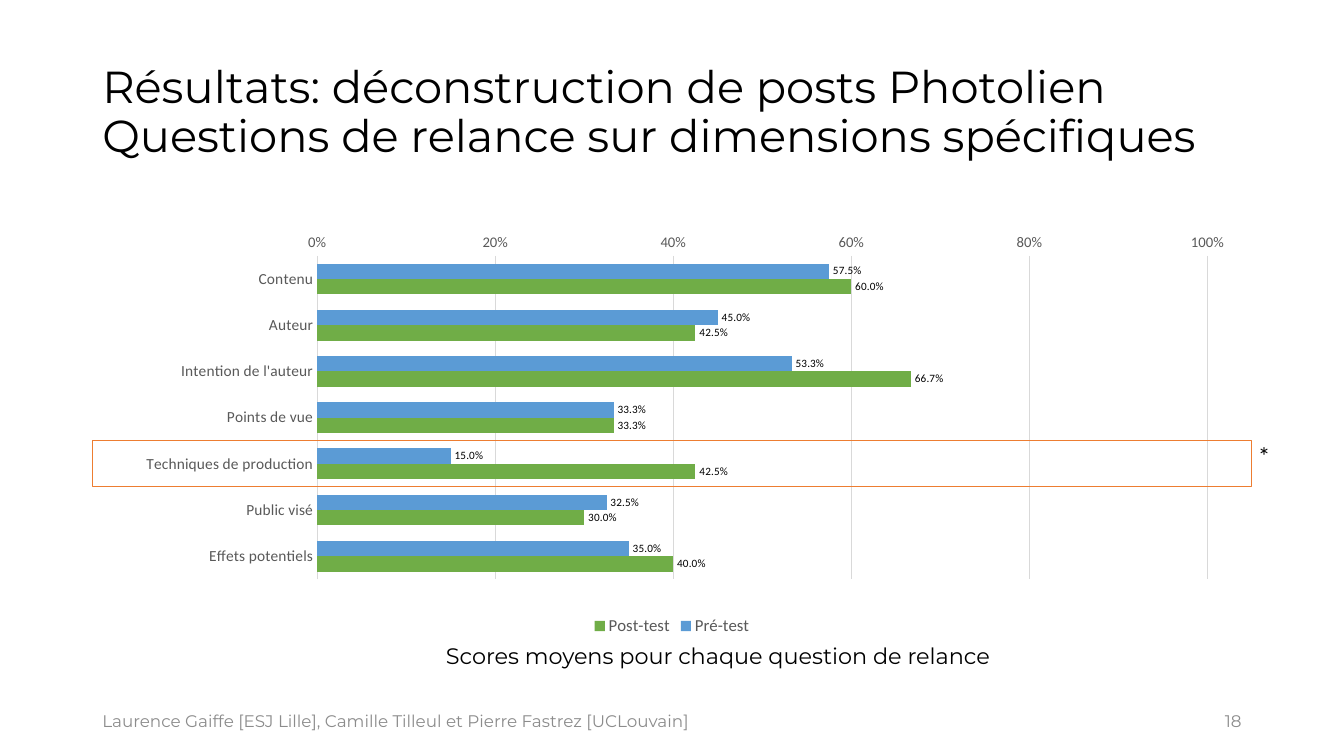
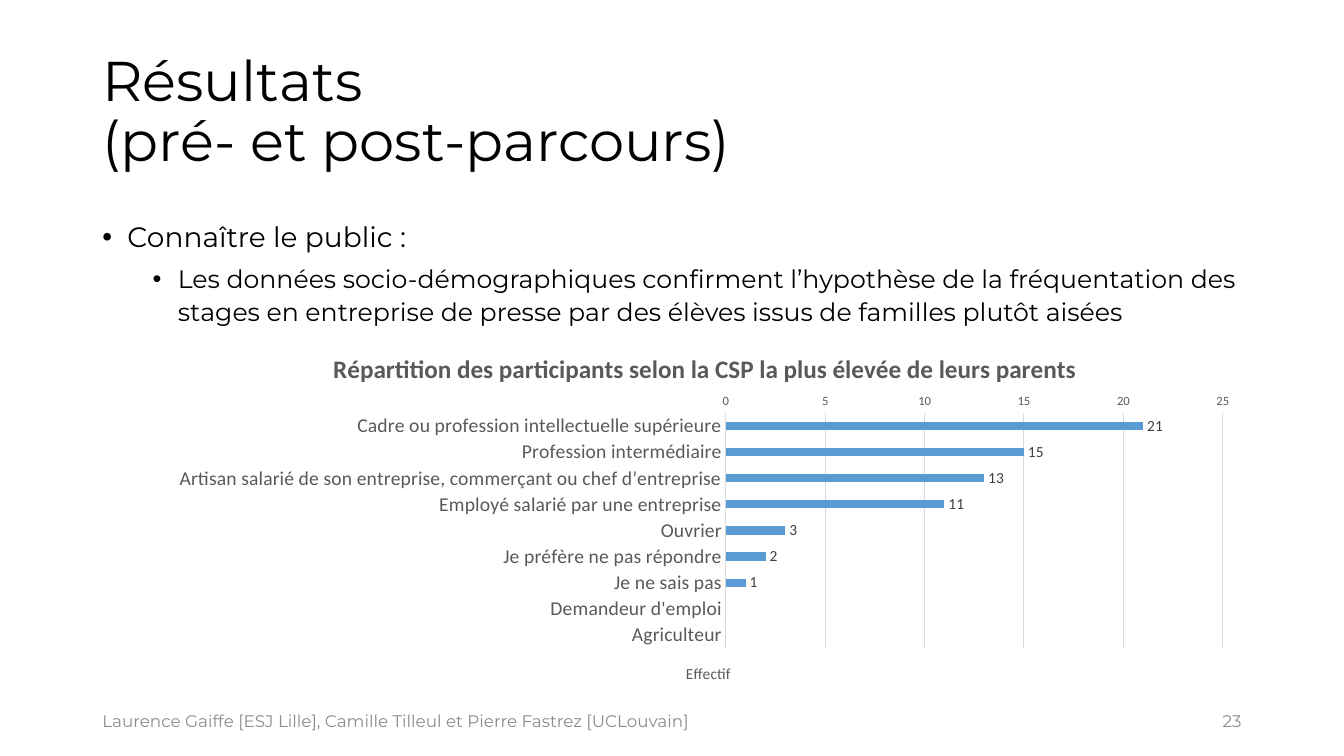
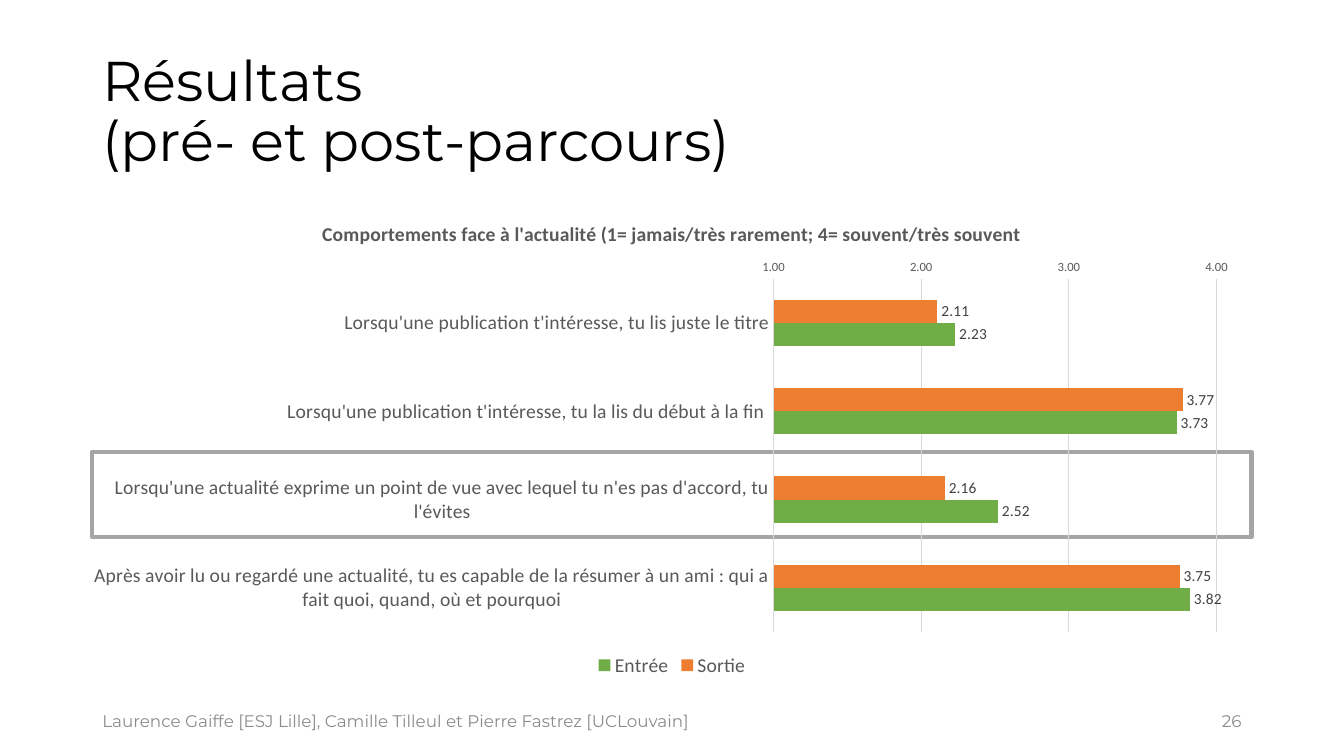
from lxml import etree
from pptx import Presentation
from pptx.chart.data import CategoryChartData
from pptx.dml.color import RGBColor
from pptx.enum import chart as ch, shapes, text
from pptx.oxml import ns
from pptx.util import Pt


class Theme:
    heading, chart_font = "Montserrat", "Calibri"
    black, footer, axis, label, grid = "000000", "8C8C8C", "595959", "404040", "D9D9D9"
    blue, green, orange, gray = "5B9BD5", "70AD47", "ED7D31", "A5A5A5"
    footer_size, caption_size, star_size = 12, 16, 18
    left, width = 66, 828


def add_text(slide, box, lines, size, color=Theme.black, font=Theme.heading,
             anchor=text.MSO_ANCHOR.MIDDLE, align=text.PP_ALIGN.LEFT, spacing=1.0):
    """Put one paragraph, with line breaks between its lines, in a text box."""
    frame = slide.shapes.add_textbox(*map(Pt, box)).text_frame
    frame.word_wrap, frame.vertical_anchor = True, anchor
    paragraph = frame.paragraphs[0]
    paragraph.alignment, paragraph.line_spacing = align, spacing
    for i, line in enumerate(lines):
        if i:
            paragraph.add_line_break()
        run = paragraph.add_run()
        run.text = line
        run.font.name, run.font.size = font, Pt(size)
        run.font.color.rgb = RGBColor.from_string(color)
    return frame


def place_in_chart(parent, fractions, inner=False):
    """Give a chart part a fixed place, as fractions of the chart."""
    layout = parent.find(ns.qn("c:layout"))
    if layout is None:
        layout = etree.Element(ns.qn("c:layout"))
        parent.insert(0, layout)
    manual = etree.SubElement(layout, ns.qn("c:manualLayout"))
    settings = [("layoutTarget", "inner")] if inner else []
    settings += [("xMode", "edge"), ("yMode", "edge"), *zip("xywh", fractions)]
    for tag, value in settings:
        etree.SubElement(manual, ns.qn(f"c:{tag}")).set("val", str(value))


RESULTS = ["Résultats", "(pré- et post-parcours)"]
AUTHORS = "Laurence Gaiffe [ESJ Lille], Camille Tilleul et Pierre Fastrez [UCLouvain]"

# Content; boxes are left, top, width, height, and plots are measured inside their chart
pages = [
    dict(
        number=18, title_size=32,
        title=["Résultats: déconstruction de posts Photolien",
               "Questions de relance sur dimensions spécifiques"],
        box=(Theme.left, 144, Theme.width, 313.2), plot=(160.6, 38.8, 635.9, 231.1),
        categories=["Contenu", "Auteur", "Intention de l'auteur", "Points de vue",
                    "Techniques de production", "Public visé", "Effets potentiels"],
        series=[("Pré-test", Theme.blue, [0.575, 0.45, 0.533, 0.333, 0.15, 0.325, 0.35]),
                ("Post-test", Theme.green, [0.6, 0.425, 0.667, 0.333, 0.425, 0.3, 0.4])],
        scale=dict(minimum_scale=0, maximum_scale=1, major_unit=0.2),
        gap=100, axis_format="0%", label_format="0.0%", label_color=Theme.black,
        sizes=dict(category=11, value=10.5, label=8, legend=12),
        highlight=dict(top=314.6, height=33.1, color=Theme.orange, weight=1, behind=False)),
    dict(
        number=23, title_size=40, title=RESULTS,
        box=(113, 238.3, 781.2, 262.1), plot=(405.5, 56.7, 355, 167.9),
        chart_title="Répartition des participants selon la CSP la plus élevée de leurs parents",
        axis_title="Effectif",
        categories=["Cadre ou profession intellectuelle supérieure", "Profession intermédiaire",
                    "Artisan salarié de son entreprise, commerçant ou chef d’entreprise",
                    "Employé salarié par une entreprise", "Ouvrier",
                    "Je préfère ne pas répondre", "Je ne sais pas",
                    "Demandeur d'emploi", "Agriculteur"],
        series=[("Effectif", Theme.blue, [21, 15, 13, 11, 3, 2, 1, None, None])],
        scale=dict(minimum_scale=0, maximum_scale=25, major_unit=5),
        gap=219, axis_format="General", label_format="General", label_color=Theme.label,
        sizes=dict(category=14, value=9, label=11, title=18, axis_title=11)),
    dict(
        number=26, title_size=40, title=RESULTS,
        box=(Theme.left, 144, Theme.width, 342.7), plot=(486.6, 55.3, 316.4, 252.2),
        chart_title="Comportements face à l'actualité "
                    "(1= jamais/très rarement; 4= souvent/très souvent",
        categories=["Lorsqu'une publication t'intéresse, tu lis juste le titre",
                    "Lorsqu'une publication t'intéresse, tu la lis du début à la fin ",
                    "Lorsqu'une actualité exprime un point de vue avec lequel "
                    "tu n'es pas d'accord, tu l'évites",
                    "Après avoir lu ou regardé une actualité, tu es capable de la résumer "
                    "à un ami : qui a fait quoi, quand, où et pourquoi"],
        series=[("Sortie", Theme.orange, [2.11, 3.77, 2.16, 3.75]),
                ("Entrée", Theme.green, [2.23, 3.73, 2.52, 3.82])],
        scale=dict(minimum_scale=1, maximum_scale=4, major_unit=1),
        gap=182, axis_format="###0.00", label_format="###0.00", label_color=Theme.label,
        sizes=dict(category=14, value=9, label=11, legend=14, title=14),
        highlight=dict(top=322.6, height=61.2, color=Theme.gray, weight=3, behind=True)),
]

deck = Presentation()
deck.slide_width, deck.slide_height = Pt(960), Pt(540)
slides = []

for page in pages:
    slide = deck.slides.add_slide(deck.slide_layouts[6])
    slides.append(slide)
    sizes = page["sizes"]

    # Title and footer
    add_text(slide, (Theme.left, 28.8, Theme.width, 104.4), page["title"],
             page["title_size"], spacing=0.9)
    add_text(slide, (Theme.left, 500.5, 600, 28.8), [AUTHORS],
             Theme.footer_size, Theme.footer)
    add_text(slide, (678, 500.5, 216, 28.8), [str(page["number"])],
             Theme.footer_size, Theme.footer, align=text.PP_ALIGN.RIGHT)

    # Chart
    data = CategoryChartData()
    data.categories = page["categories"]
    for name, _, values in page["series"]:
        data.add_series(name, values)
    chart_frame = slide.shapes.add_chart(ch.XL_CHART_TYPE.BAR_CLUSTERED,
                                         *map(Pt, page["box"]), data)
    chart = chart_frame.chart
    chart.font.name, chart.font.size = Theme.chart_font, Pt(10)
    chart.has_title = "title" in sizes
    chart.has_legend = "legend" in sizes
    _, _, chart_width, chart_height = page["box"]
    place_in_chart(chart.plots[0]._element.getparent(),
                   [length / whole for length, whole in
                    zip(page["plot"], (chart_width, chart_height) * 2)], inner=True)

    # Bars and value labels
    plot = chart.plots[0]
    plot.gap_width, plot.overlap, plot.vary_by_categories = page["gap"], 0, False
    for series, (_, color, _) in zip(plot.series, page["series"]):
        series.format.fill.solid()
        series.format.fill.fore_color.rgb = RGBColor.from_string(color)
        labels = series.data_labels
        for key, value in dict(show_value=True, number_format=page["label_format"],
                               number_format_is_linked=False,
                               position=ch.XL_LABEL_POSITION.OUTSIDE_END).items():
            setattr(labels, key, value)
        labels.font.name, labels.font.size = Theme.chart_font, Pt(sizes["label"])
        labels.font.color.rgb = RGBColor.from_string(page["label_color"])

    # Axes
    categories, scores = chart.category_axis, chart.value_axis
    categories.reverse_order = True
    scores.has_major_gridlines = True
    for key, value in page["scale"].items():
        setattr(scores, key, value)
    scores.tick_labels.number_format = page["axis_format"]
    scores.tick_labels.number_format_is_linked = False
    scores.format.line.fill.background()
    for axis in (categories, scores):
        axis.major_tick_mark = axis.minor_tick_mark = ch.XL_TICK_MARK.NONE
    for line in (categories.format.line, scores.major_gridlines.format.line):
        line.width = Pt(0.75)
        line.color.rgb = RGBColor.from_string(Theme.grid)

    # Chart wording: tick labels, legend, titles
    fonts = [(categories.tick_labels.font, "category"), (scores.tick_labels.font, "value")]
    if chart.has_legend:
        chart.legend.position = ch.XL_LEGEND_POSITION.BOTTOM
        chart.legend.include_in_layout = False
        fonts.append((chart.legend.font, "legend"))
    if chart.has_title:
        chart.chart_title.include_in_layout = False
        chart.chart_title.text_frame.text = page["chart_title"]
        fonts.append((chart.chart_title.text_frame.paragraphs[0].runs[0].font, "title"))
    if "axis_title" in page:
        unit = scores.axis_title
        unit.text_frame.text = page["axis_title"]
        place_in_chart(unit._element, (0.48, 0.89))
        fonts.append((unit.text_frame.paragraphs[0].runs[0].font, "axis_title"))
    for font, role in fonts:
        font.name, font.size, font.bold = Theme.chart_font, Pt(sizes[role]), role == "title"
        font.color.rgb = RGBColor.from_string(Theme.axis)

    # Frame around the notable row
    if "highlight" in page:
        mark = page["highlight"]
        row = slide.shapes.add_shape(shapes.MSO_SHAPE.RECTANGLE, Pt(Theme.left),
                                     Pt(mark["top"]), Pt(Theme.width), Pt(mark["height"]))
        row.shadow.inherit = False
        row.fill.background()
        row.line.width = Pt(mark["weight"])
        row.line.color.rgb = RGBColor.from_string(mark["color"])
        if mark["behind"]:
            chart_frame._element.addprevious(row._element)

# Caption and significance mark of the first slide
add_text(slides[0], (Theme.left, 457.2, 894, 28.8),
         ["Scores moyens pour chaque question de relance"], Theme.caption_size,
         anchor=text.MSO_ANCHOR.TOP, align=text.PP_ALIGN.CENTER, spacing=0.9)
add_text(slides[0], (891.4, 311, 24, 28.8), ["*"], Theme.star_size,
         font=Theme.chart_font, anchor=text.MSO_ANCHOR.TOP)

# Bullets of the second slide: text, size, indent, space before
bullets = [
    ("Connaître le public :", 20, 18, 0),
    ("Les données socio-démographiques confirment l’hypothèse de la fréquentation des "
     "stages en entreprise de presse par des élèves issus de familles plutôt aisées",
     18, 54, 5),
]
body = slides[1].shapes.add_textbox(Pt(Theme.left), Pt(151), Pt(Theme.width), Pt(92)).text_frame
body.word_wrap = True
for i, (words, size, indent, before) in enumerate(bullets):
    point = body.add_paragraph() if i else body.paragraphs[0]
    point.text, point.level = words, i
    point.line_spacing, point.space_before = 1.1, Pt(before)
    properties = point._p.get_or_add_pPr()
    properties.set("marL", str(Pt(indent)))
    properties.set("indent", str(-Pt(18)))
    etree.SubElement(properties, ns.qn("a:buFont")).set("typeface", "Arial")
    etree.SubElement(properties, ns.qn("a:buChar")).set("char", "•")
    font = point.runs[0].font
    font.name, font.size = Theme.heading, Pt(size)
    font.color.rgb = RGBColor.from_string(Theme.black)

deck.save("out.pptx")
